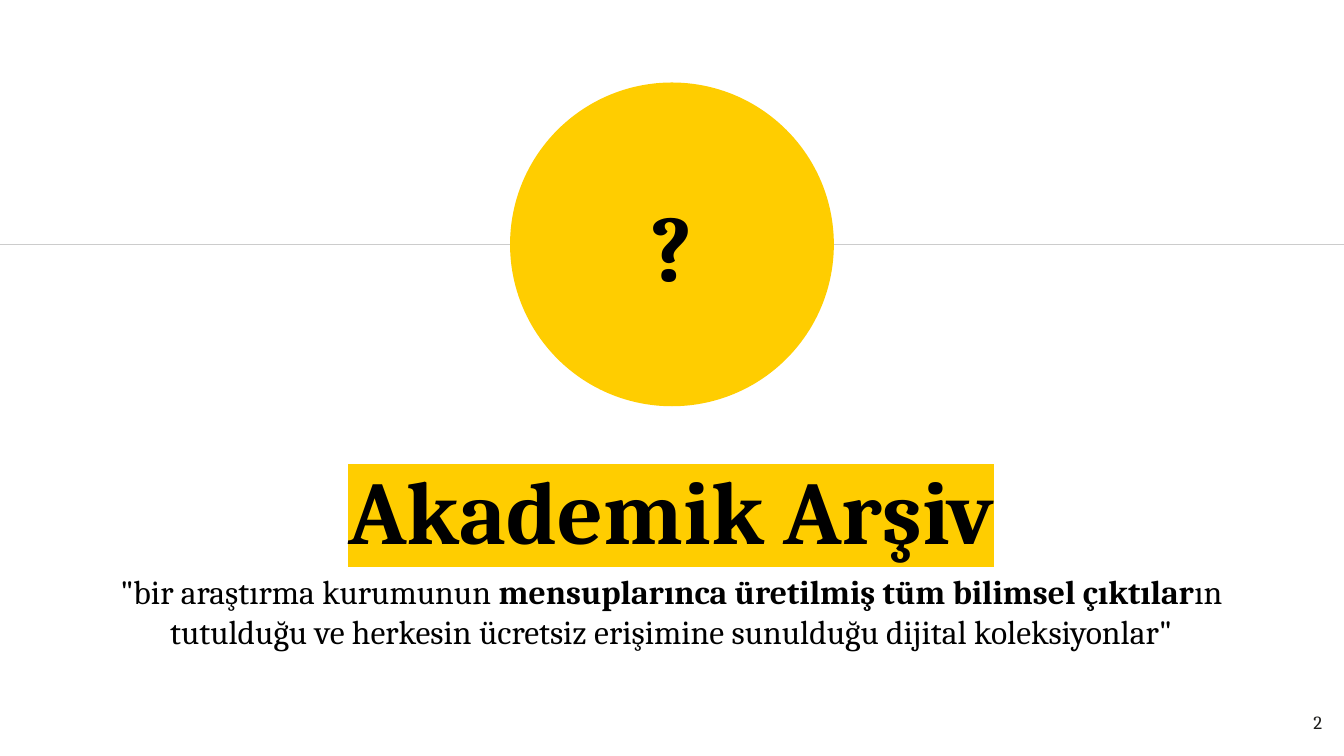
from lxml.etree import SubElement
from pptx import Presentation
from pptx.dml.color import RGBColor
from pptx.enum.shapes import MSO_CONNECTOR, MSO_SHAPE
from pptx.enum.text import MSO_ANCHOR, MSO_AUTO_SIZE, PP_ALIGN
from pptx.oxml import parse_xml
from pptx.oxml.ns import nsdecls, qn
from pptx.util import Cm, Pt

YELLOW = RGBColor(0xFF, 0xCD, 0x00)
BLACK = RGBColor(0x00, 0x00, 0x00)
INK = RGBColor(0x1D, 0x1D, 0x1B)
GREY = RGBColor(0xCC, 0xCC, 0xCC)

WIDTH, HEIGHT = 25.4, 14.29
RULE_Y = 4.62
DIAMETER = 6.12


class DefinitionSlide:
    font_name = "Cambria"
    inset = Cm(0.25)

    def __init__(self, deck):
        self.slide = deck.slides.add_slide(deck.slide_layouts[5])

    def fill_text(self, shape, runs, size, color=BLACK, align=PP_ALIGN.CENTER,
                  anchor=MSO_ANCHOR.TOP):
        frame = shape.text_frame
        frame.word_wrap = True
        frame.auto_size = MSO_AUTO_SIZE.NONE
        frame.vertical_anchor = anchor
        frame.margin_left = frame.margin_right = self.inset
        frame.margin_top = frame.margin_bottom = self.inset
        paragraph = frame.paragraphs[0]
        paragraph.alignment = align
        for words, bold in runs:
            run = paragraph.add_run()
            run.text = words
            run.font.name = self.font_name
            run.font.size = Pt(size)
            run.font.bold = bold
            run.font.color.rgb = color

    def title(self, words, left, top, width, height, size, highlight):
        heading = self.slide.shapes.title
        heading.left, heading.top = Cm(left), Cm(top)
        heading.width, heading.height = Cm(width), Cm(height)
        self.fill_text(heading, [(words, True)], size, anchor=MSO_ANCHOR.MIDDLE)
        properties = heading.text_frame.paragraphs[0].runs[0].font._element
        properties.find(qn("a:solidFill")).addnext(parse_xml(
            f'<a:highlight {nsdecls("a")}><a:srgbClr val="{highlight}"/></a:highlight>'))

    def text(self, runs, left, top, width, height, size, **style):
        box = self.slide.shapes.add_textbox(Cm(left), Cm(top), Cm(width), Cm(height))
        self.fill_text(box, runs, size, **style)

    def rule(self, y, color, weight):
        line = self.slide.shapes.add_connector(
            MSO_CONNECTOR.STRAIGHT, Cm(0), Cm(y), Cm(WIDTH), Cm(y))
        line.line.color.rgb = color
        line.line.width = Pt(weight)
        SubElement(line._element.spPr, qn("a:effectLst"))

    def circle(self, words, center_x, center_y, diameter, fill, size):
        disc = self.slide.shapes.add_shape(
            MSO_SHAPE.OVAL, Cm(center_x - diameter / 2), Cm(center_y - diameter / 2),
            Cm(diameter), Cm(diameter))
        disc.shadow.inherit = False
        disc.fill.solid()
        disc.fill.fore_color.rgb = fill
        disc.line.fill.background()
        self.fill_text(disc, [(words, True)], size, anchor=MSO_ANCHOR.MIDDLE)


def main():
    deck = Presentation()
    deck.slide_width, deck.slide_height = Cm(WIDTH), Cm(HEIGHT)
    page = DefinitionSlide(deck)
    page.title("Akademik Arşiv", 5.41, 8, 14.55, 3.23, 48, YELLOW)
    definition = [
        ('"bir araştırma kurumunun ', False),
        ("mensuplarınca üretilmiş tüm bilimsel çıktılar", True),
        ('ın tutulduğu ve herkesin ücretsiz erişimine sunulduğu dijital koleksiyonlar"',
         False),
    ]
    page.text(definition, 1.22, 10.54, 22.94, 2.18, 18)
    page.rule(RULE_Y, GREY, 0.75)
    page.circle("?", WIDTH / 2, RULE_Y, DIAMETER, YELLOW, 50)
    page.text([("2", False)], 23.72, 13.18, 1.52, 1.09, 10,
              color=INK, align=PP_ALIGN.RIGHT)
    deck.save("out.pptx")


if __name__ == "__main__":
    main()
